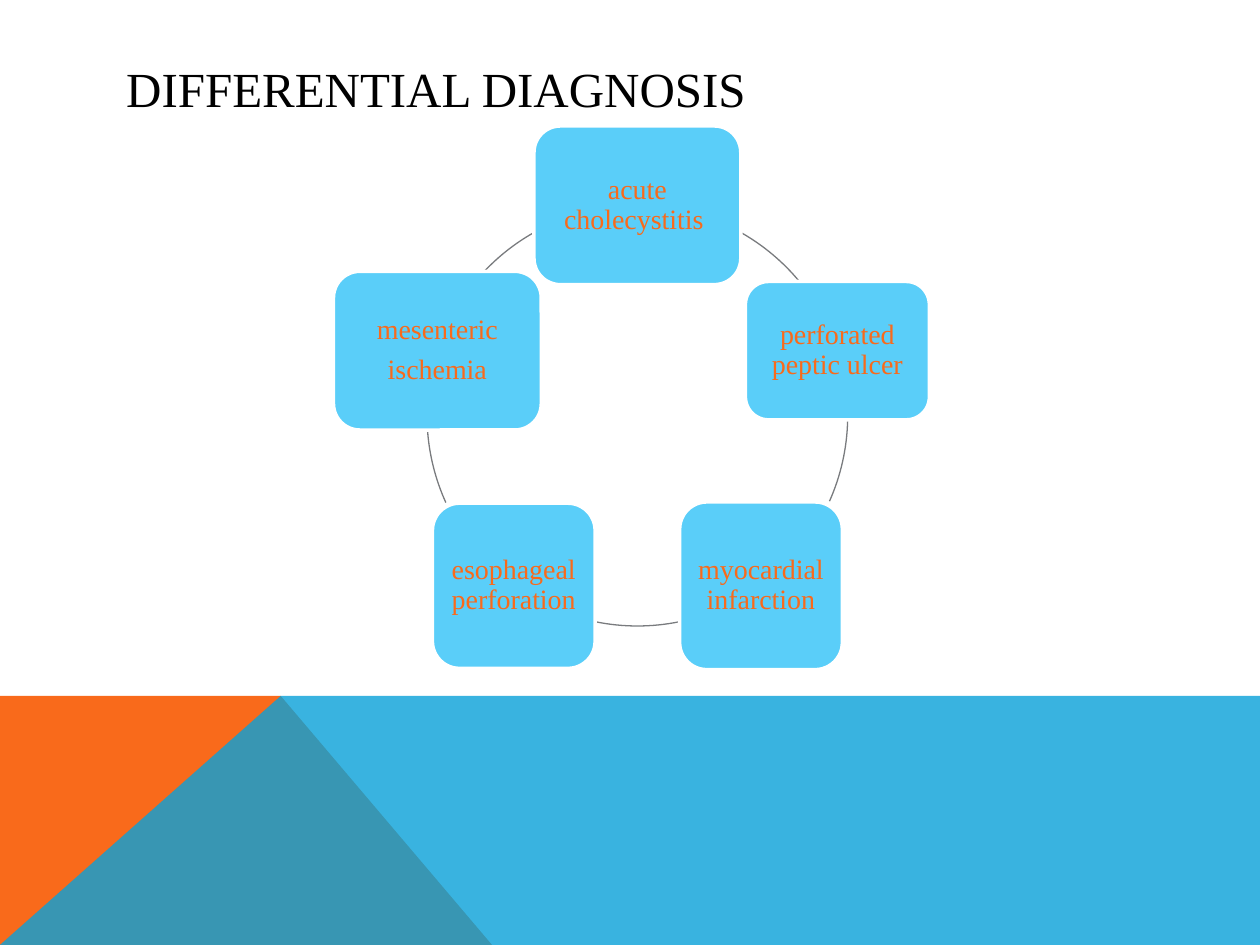
from math import cos, radians, sin

from lxml import etree
from pptx import Presentation
from pptx.dml.color import RGBColor
from pptx.enum.shapes import MSO_SHAPE
from pptx.enum.text import MSO_ANCHOR, MSO_AUTO_SIZE, PP_ALIGN
from pptx.oxml.ns import qn
from pptx.util import Cm, Pt

ROUNDED = MSO_SHAPE.ROUNDED_RECTANGLE
ARC = MSO_SHAPE.ARC
LEFT, CENTER = PP_ALIGN.LEFT, PP_ALIGN.CENTER
MIDDLE = MSO_ANCHOR.MIDDLE
NO_AUTOFIT = MSO_AUTO_SIZE.NONE

ORANGE = RGBColor(0xF9, 0x6A, 0x1B)
BLUE = RGBColor(0x08, 0xA1, 0xD9)
SKY = RGBColor(0x5A, 0xCE, 0xF9)
GRAY = RGBColor(0x79, 0x7B, 0x7E)
BLACK = RGBColor(0, 0, 0)
WHITE = RGBColor(0xFF, 0xFF, 0xFF)
FONT = "Times New Roman"

# Clockwise from the top: text, width and height in cm
DIAGNOSES = [
    ("acute cholecystitis ", 4.17, 3.2),
    ("perforated peptic ulcer", 3.71, 2.79),
    ("myocardial infarction", 3.28, 3.38),
    ("esophageal perforation", 3.28, 3.33),
    ("mesenteric\nischemia", 4.19, 3.2),
]
# Visible ring between neighbours: start and end in degrees clockwise from east
ARCS = [(299.8, 320.1), (1.4, 24), (78.6, 101.4), (155.6, 175.9), (223.5, 240.2)]


def write_text(shape, text, size, color, align, spacing=1.0, after=0, inset=None):
    frame = shape.text_frame
    frame.word_wrap = True
    frame.auto_size = NO_AUTOFIT
    frame.vertical_anchor = MIDDLE
    if inset is not None:
        frame.margin_left = frame.margin_right = Cm(inset)
        frame.margin_top = frame.margin_bottom = Cm(inset)
    frame.text = text
    for para in frame.paragraphs:
        para.alignment = align
        para.line_spacing = spacing
        para.space_after = Pt(after)
        for span in para.runs:
            span.font.name = FONT
            span.font.size = Pt(size)
            span.font.color.rgb = color


def add_polygon(page, points, color, opacity=100):
    corners = [(Cm(x), Cm(y)) for x, y in points]
    builder = page.shapes.build_freeform(*corners[0], scale=1.0)
    builder.add_line_segments(corners[1:], close=True)
    polygon = builder.convert_to_shape()
    polygon.shadow.inherit = False
    polygon.fill.solid()
    polygon.fill.fore_color.rgb = color
    polygon.line.fill.background()
    if opacity < 100:
        tint = polygon.fill._xPr.find(".//" + qn("a:srgbClr"))
        etree.SubElement(tint, qn("a:alpha")).set("val", str(opacity * 1000))


def add_footer_band(page, left, top, width, height):
    bottom, peak = top + height, left + 5.66
    add_polygon(page, [(left, bottom), (left, top), (peak, top),
                       (left + 9.92, bottom)], ORANGE)
    add_polygon(page, [(left, bottom), (peak, top), (left + width, top),
                       (left + width, bottom)], BLUE, opacity=80)


def add_title(page, left, top, width, height):
    title = page.shapes.title
    title.left, title.top = Cm(left), Cm(top)
    title.width, title.height = Cm(width), Cm(height)
    write_text(title, "DIFFERENTIAL DIAGNOSIS", 28, BLACK, LEFT)


def add_cycle(page, left, top, diameter):
    radius = diameter / 2
    center_x, center_y = left + radius, top + radius

    # Ring segments; an arc adjustment of 0.6 is one degree
    for start, end in ARCS:
        arc = page.shapes.add_shape(ARC, Cm(left), Cm(top), Cm(diameter), Cm(diameter))
        arc.adjustments[0], arc.adjustments[1] = start * 0.6, end * 0.6
        arc.shadow.inherit = False
        arc.fill.background()
        arc.line.color.rgb = GRAY
        arc.line.width = Pt(0.75)

    # Diagnoses, evenly spaced around the ring
    step = 360 / len(DIAGNOSES)
    for index, (text, width, height) in enumerate(DIAGNOSES):
        angle = radians(index * step - 90)
        x = center_x + radius * cos(angle) - width / 2
        y = center_y + radius * sin(angle) - height / 2
        node = page.shapes.add_shape(ROUNDED, Cm(x), Cm(y), Cm(width), Cm(height))
        node.shadow.inherit = False
        node.fill.solid()
        node.fill.fore_color.rgb = SKY
        node.line.color.rgb = WHITE
        node.line.width = Pt(2)
        write_text(node, text, 16, ORANGE, CENTER, spacing=0.9, after=5.6, inset=0.17)


def main():
    deck = Presentation()
    deck.slide_width, deck.slide_height = Cm(25.4), Cm(19.05)
    title_only = deck.slide_layouts[5]
    page = deck.slides.add_slide(title_only)
    add_footer_band(page, 0, 14.03, 25.4, 5.02)
    add_title(page, 2.29, 1.02, 20.88, 1.52)
    add_cycle(page, 8.61, 4.14, 8.48)
    deck.save("out.pptx")


if __name__ == "__main__":
    main()
